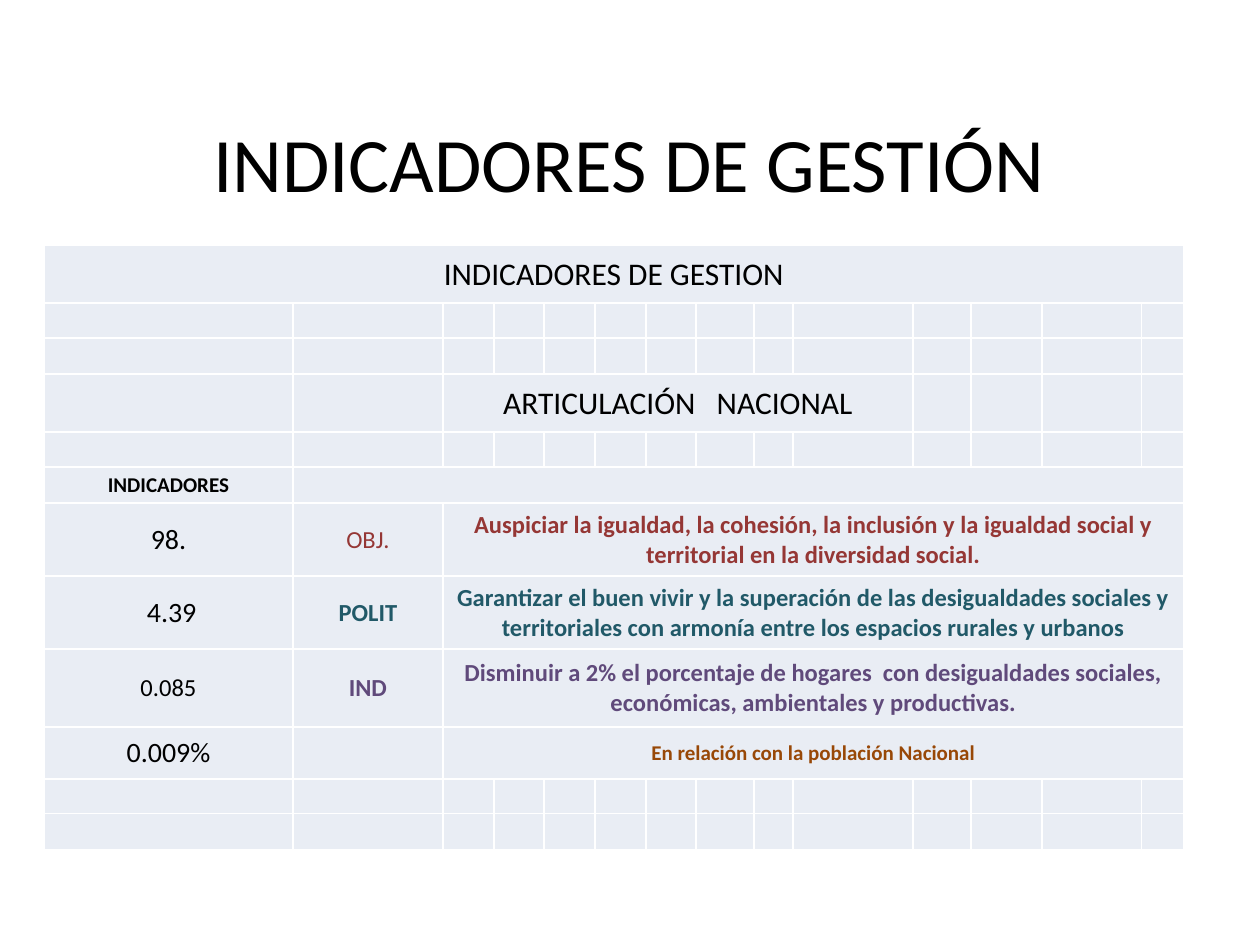
from typing import NamedTuple

from lxml import etree
from pptx import Presentation
from pptx.dml.color import RGBColor
from pptx.enum import text
from pptx.oxml import ns
from pptx.util import Emu, Pt

PX_PER_INCH = 126
FONT = "Calibri"
BLACK = RGBColor(0x00, 0x00, 0x00)
WHITE = RGBColor(0xFF, 0xFF, 0xFF)
PALE = RGBColor(0xE9, 0xED, 0xF4)
RED = RGBColor(0x95, 0x37, 0x35)
TEAL = RGBColor(0x21, 0x59, 0x68)
PURPLE = RGBColor(0x60, 0x4A, 0x7B)
BROWN = RGBColor(0x98, 0x48, 0x07)

COLUMN_WIDTHS = [249, 150, 51, 50, 51, 51, 50, 58, 39, 120, 58, 71, 100, 42]
ROW_HEIGHTS = [58, 35, 36, 58, 35, 36, 73, 73, 78, 52, 35, 36]
EMPTY_SIZE = 10


class Entry(NamedTuple):
    row: int
    column: int
    words: str
    size: int
    color: RGBColor = BLACK
    bold: bool = False
    span: int = 1


ENTRIES = [
    Entry(0, 0, "INDICADORES DE GESTION", 18, span=14),
    Entry(3, 2, "ARTICULACIÓN   NACIONAL", 18, span=8),
    Entry(5, 0, "INDICADORES", 12, bold=True),
    Entry(5, 1, "", EMPTY_SIZE, span=13),
    Entry(6, 0, "98.", 16),
    Entry(6, 1, "OBJ.", 14, RED),
    Entry(6, 2, "Auspiciar la igualdad, la cohesión, la inclusión y la igualdad social y "
                "territorial en la diversidad social.", 14, RED, True, 12),
    Entry(7, 0, " 4.39", 16),
    Entry(7, 1, "POLIT", 14, TEAL, True),
    Entry(7, 2, "Garantizar el buen vivir y la superación de las desigualdades sociales y "
                "territoriales con armonía entre los espacios rurales y urbanos",
          14, TEAL, True, 12),
    Entry(8, 0, "0.085", 14),
    Entry(8, 1, "IND", 14, PURPLE, True),
    Entry(8, 2, "Disminuir a 2% el porcentaje de hogares  con desigualdades sociales, "
                "económicas, ambientales y productivas.", 14, PURPLE, True, 12),
    Entry(9, 0, "0.009%", 16),
    Entry(9, 2, "En relación con la población Nacional", 12, BROWN, True, 12),
]


def px(length: int) -> Emu:
    return Emu(round(length * 914400 / PX_PER_INCH))


def write(paragraph, words: str, size: int, color: RGBColor, bold: bool = False) -> None:
    paragraph.alignment = text.PP_ALIGN.CENTER
    run = paragraph.add_run()
    run.text = words
    run.font.name = FONT
    run.font.size = Pt(size)
    run.font.bold = bold
    run.font.color.rgb = color


def style_cell(cell) -> None:
    """Give a cell white borders, a pale fill, thin margins and a small empty line."""
    cell.margin_left = cell.margin_right = cell.margin_top = px(1)
    cell.margin_bottom = 0
    cell.vertical_anchor = text.MSO_ANCHOR.MIDDLE
    properties = cell._tc.get_or_add_tcPr()
    for side in ("a:lnL", "a:lnR", "a:lnT", "a:lnB"):
        line = etree.SubElement(properties, ns.qn(side), w=str(Pt(1)))
        fill = etree.SubElement(line, ns.qn("a:solidFill"))
        etree.SubElement(fill, ns.qn("a:srgbClr"), val=str(WHITE))
    cell.fill.solid()
    cell.fill.fore_color.rgb = PALE
    paragraph = cell.text_frame.paragraphs[0]
    etree.SubElement(paragraph._p, ns.qn("a:endParaRPr"), sz=str(EMPTY_SIZE * 100))


def add_title(slide) -> None:
    frame = slide.shapes.add_textbox(px(94), px(86), px(1071), px(246)).text_frame
    frame.word_wrap = True
    frame.vertical_anchor = text.MSO_ANCHOR.MIDDLE
    frame.margin_bottom = px(100)
    write(frame.paragraphs[0], "INDICADORES DE GESTIÓN", 44, BLACK)


def add_indicators(slide) -> None:
    table = slide.shapes.add_table(
        len(ROW_HEIGHTS), len(COLUMN_WIDTHS), px(44), px(245),
        px(sum(COLUMN_WIDTHS)), px(sum(ROW_HEIGHTS))).table
    table.first_row = table.horz_banding = False
    for column, width in zip(table.columns, COLUMN_WIDTHS):
        column.width = px(width)
    for row, height in zip(table.rows, ROW_HEIGHTS):
        row.height = px(height)
        for cell in row.cells:
            style_cell(cell)
    for entry in ENTRIES:
        cell = table.cell(entry.row, entry.column)
        if entry.span > 1:
            cell.merge(table.cell(entry.row, entry.column + entry.span - 1))
        if entry.words:
            write(cell.text_frame.paragraphs[0], entry.words, entry.size,
                  entry.color, entry.bold)


def main() -> None:
    deck = Presentation()
    deck.slide_width, deck.slide_height = px(1260), px(945)
    slide = deck.slides.add_slide(deck.slide_layouts[6])
    add_title(slide)
    add_indicators(slide)
    deck.save("out.pptx")


if __name__ == "__main__":
    main()
